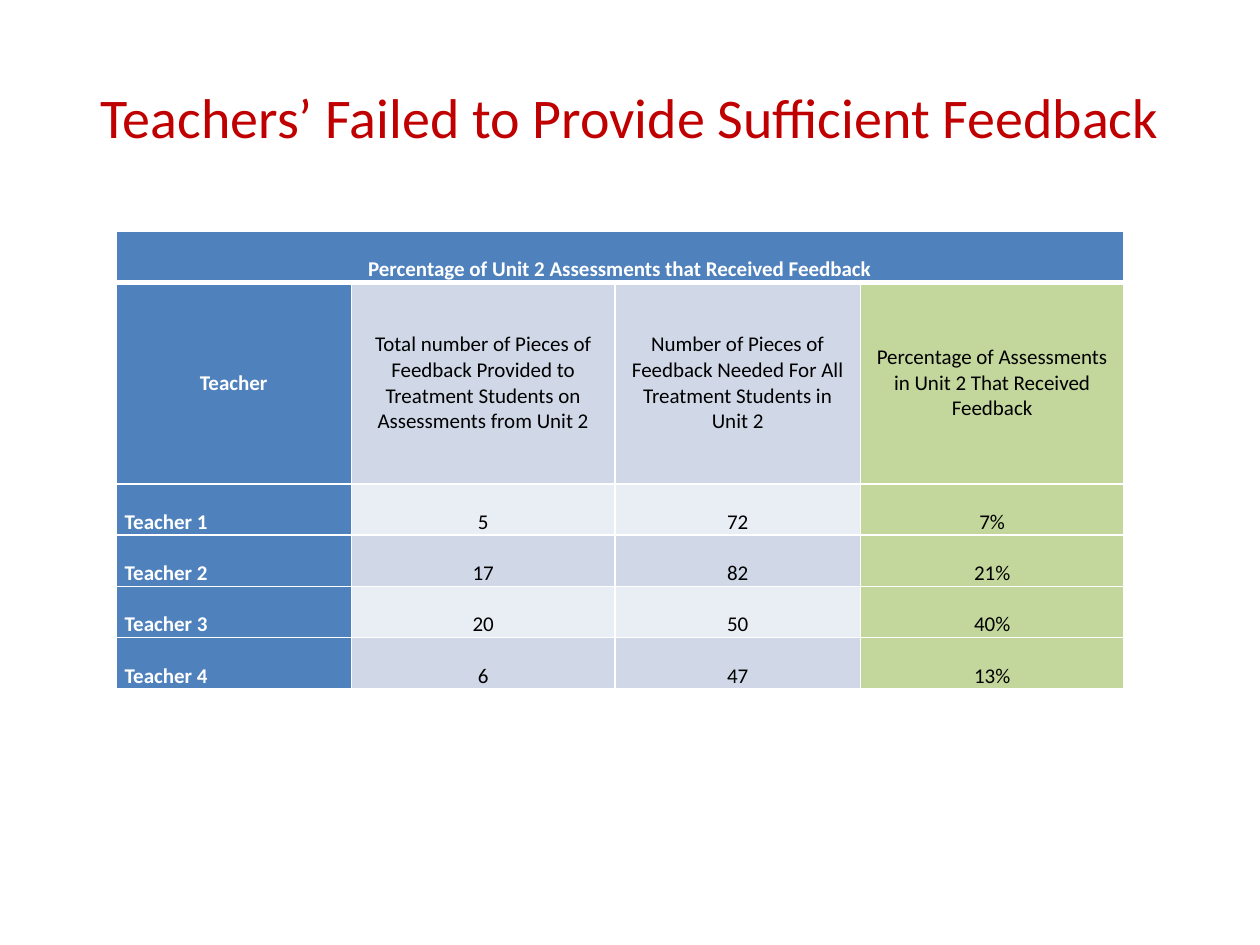
import dataclasses

import pptx
import pptx.dml.color
import pptx.enum.text
import pptx.oxml
import pptx.oxml.ns
import pptx.util

Pt = pptx.util.Pt
ALIGN = pptx.enum.text.PP_ALIGN
ANCHOR = pptx.enum.text.MSO_ANCHOR


@dataclasses.dataclass(frozen=True)
class Theme:
    font: str = "Calibri"
    title_size: int = 32
    table_size: int = 12
    title: str = "C00000"
    header: str = "4F81BD"
    band_dark: str = "D0D8E8"
    band_light: str = "E9EDF4"
    result: str = "C3D69B"
    ink: str = "000000"
    white: str = "FFFFFF"


THEME = Theme()

TITLE = "Teachers’ Failed to Provide Sufficient Feedback"
CAPTION = "Percentage of Unit 2 Assessments that Received Feedback"
HEADINGS = [
    "Teacher",
    "Total number of Pieces of Feedback Provided to Treatment Students on "
    "Assessments from Unit 2",
    "Number of Pieces of Feedback Needed For All Treatment Students in Unit 2",
    "Percentage of Assessments in Unit 2 That Received Feedback",
]
TEACHERS = [
    ["Teacher 1", "5", "72", "7%"],
    ["Teacher 2", "17", "82", "21%"],
    ["Teacher 3", "20", "50", "40%"],
    ["Teacher 4", "6", "47", "13%"],
]
COLUMN_SHARES = [1.87, 2.09, 1.95, 2.09]
ROW_SHARES = [1, 4, 1, 1, 1, 1]


def rgb(color):
    return pptx.dml.color.RGBColor.from_string(color)


def write_text(frame, text, *, size, color, bold=False, align=ALIGN.CENTER,
               spacing=None):
    paragraph = frame.paragraphs[0]
    paragraph.alignment = align
    paragraph.line_spacing = spacing
    run = paragraph.add_run()
    run.text = text
    run.font.name = THEME.font
    run.font.size = Pt(size)
    run.font.bold = bold
    run.font.color.rgb = rgb(color)


def set_borders(cell, **widths):
    """Draw white cell borders; widths are in points, keyed by side."""
    properties = cell._tc.get_or_add_tcPr()
    for index, side in enumerate("LRTB"):
        width = Pt(widths.get(side, 1))
        properties.insert(index, pptx.oxml.parse_xml(
            f'<a:ln{side} {pptx.oxml.ns.nsdecls("a")} w="{width}">'
            f'<a:solidFill><a:srgbClr val="{THEME.white}"/></a:solidFill>'
            f'</a:ln{side}>'))


def fill_cell(cell, text, fill, anchor, borders, **text_format):
    cell.margin_left = cell.margin_right = Pt(5)
    cell.margin_top = cell.margin_bottom = 0
    cell.vertical_anchor = anchor
    cell.fill.solid()
    cell.fill.fore_color.rgb = rgb(fill)
    set_borders(cell, **borders)
    write_text(cell.text_frame, text, size=THEME.table_size, **text_format)


def place_title(slide, left, top, width, height):
    title = slide.shapes.title
    title.left, title.top = Pt(left), Pt(top)
    title.width, title.height = Pt(width), Pt(height)
    title.text_frame.vertical_anchor = ANCHOR.MIDDLE
    write_text(title.text_frame, TITLE, size=THEME.title_size,
               color=THEME.title)


def place_feedback_table(slide, left, top, width, height):
    rows = [[CAPTION, "", "", ""], HEADINGS, *TEACHERS]
    table = slide.shapes.add_table(
        len(rows), len(HEADINGS), Pt(left), Pt(top), Pt(width), Pt(height)).table
    for column, share in zip(table.columns, COLUMN_SHARES):
        column.width = Pt(width * share / sum(COLUMN_SHARES))
    for row, share in zip(table.rows, ROW_SHARES):
        row.height = Pt(height * share / sum(ROW_SHARES))
    table.cell(0, 0).merge(table.cell(0, len(HEADINGS) - 1))

    for r, row in enumerate(rows):
        # Caption and headings sit mid-cell; the heading row is single spaced
        anchor = ANCHOR.MIDDLE if r < 2 else ANCHOR.TOP
        spacing = None if r == 1 else 2.0
        borders = {0: {"B": 3}, 1: {"T": 3}}.get(r, {})
        band = THEME.band_dark if r % 2 else THEME.band_light
        fills = [THEME.header, band, band, THEME.result]
        for c, text in enumerate(row):
            is_header = r == 0 or c == 0
            fill_cell(
                table.cell(r, c), text,
                THEME.header if is_header else fills[c], anchor, borders,
                color=THEME.white if is_header else THEME.ink,
                bold=is_header, spacing=spacing,
                align=ALIGN.LEFT if c == 0 and r > 1 else ALIGN.CENTER)


def main():
    deck = pptx.Presentation()
    deck.slide_width, deck.slide_height = Pt(720), Pt(540)
    slide = deck.slides.add_slide(deck.slide_layouts.get_by_name("Title Only"))
    place_title(slide, 36, 21.6, 648, 90)
    place_feedback_table(slide, 66.24, 132, 576, 259.2)
    deck.save("out.pptx")


if __name__ == "__main__":
    main()
